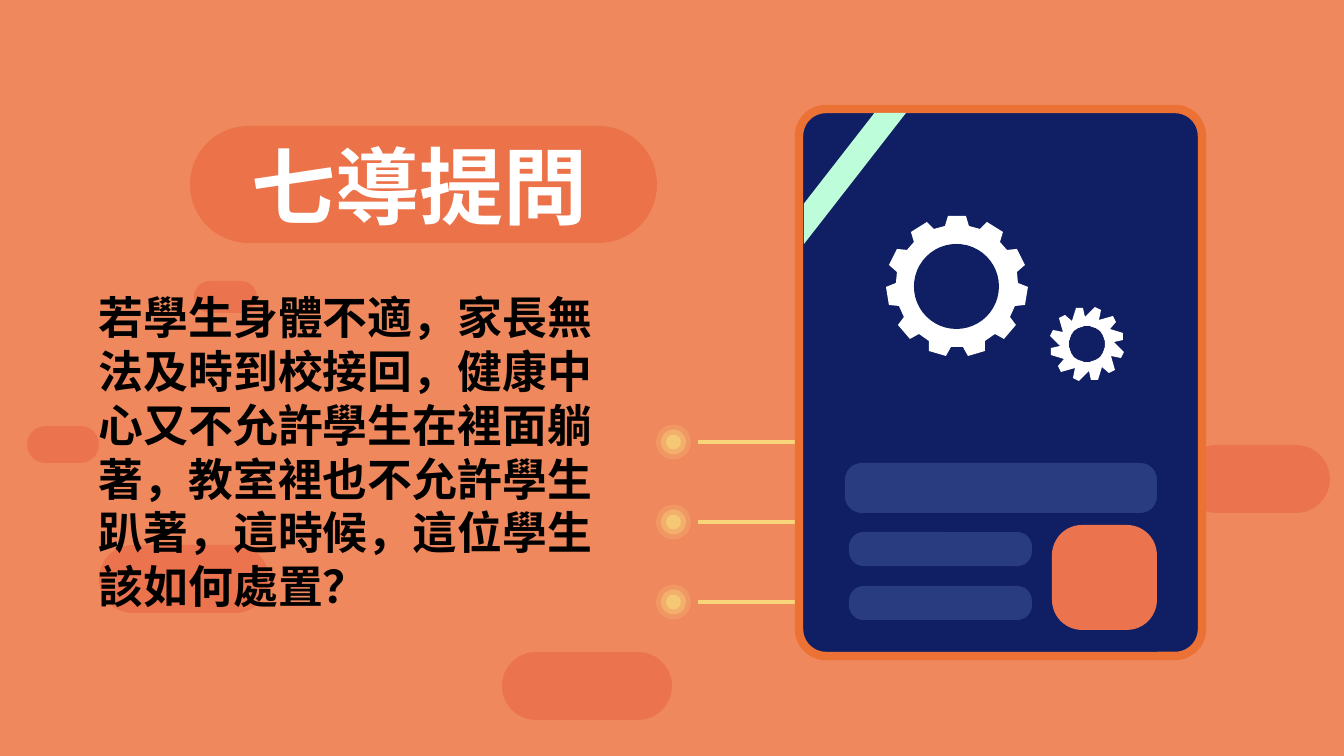
from math import cos, radians, sin

from lxml.etree import SubElement
from pptx import Presentation
from pptx.dml.color import RGBColor
from pptx.enum.shapes import MSO_CONNECTOR, MSO_SHAPE
from pptx.enum.text import PP_ALIGN
from pptx.oxml.ns import qn
from pptx.util import Pt

PX = 12192000 / 1344  # EMU per px
PEACH = RGBColor(0xEF, 0x88, 0x5D)
CORAL = RGBColor(0xEB, 0x73, 0x4E)
TITLE_CORAL = RGBColor(0xEC, 0x72, 0x49)
BORDER = RGBColor(0xEB, 0x71, 0x34)
NAVY = RGBColor(0x10, 0x1F, 0x64)
BLUE = RGBColor(0x29, 0x3C, 0x80)
MINT = RGBColor(0xBE, 0xFD, 0xDA)
YELLOW = RGBColor(0xF8, 0xD4, 0x7B)
WHITE = RGBColor(0xFF, 0xFF, 0xFF)
BLACK = RGBColor(0, 0, 0)

prs = Presentation()
prs.slide_width, prs.slide_height = round(1344 * PX), round(756 * PX)
slide = prs.slides.add_slide(prs.slide_layouts[6])
slide.background.fill.solid()
slide.background.fill.fore_color.rgb = PEACH


def add_block(kind, x, y, w, h, color, adj=None):
    s = slide.shapes.add_shape(kind, *[round(v * PX) for v in (x, y, w, h)])
    s.shadow.inherit = False
    s.fill.solid()
    s.fill.fore_color.rgb = color
    s.line.fill.background()
    if adj is not None:
        s.adjustments[0] = adj
    return s


def add_gear(cx, cy, hole, teeth, profile):
    """Draw a gear; profile lists (radius, degrees) points of one tooth."""
    rim = [(r, a + 360 / teeth * i) for i in range(teeth) for r, a in profile]
    bore = [(hole, -a) for a in range(0, 360, 5)]
    rim, bore = [[(cx + r * cos(radians(a)), cy + r * sin(radians(a)))
                  for r, a in ring] for ring in (rim, bore)]
    fb = slide.shapes.build_freeform(*rim[0], scale=PX)
    fb.add_line_segments(rim[1:])
    fb.move_to(*bore[0])
    fb.add_line_segments(bore[1:])
    s = fb.convert_to_shape()
    s.shadow.inherit = False
    s.fill.solid()
    s.fill.fore_color.rgb = WHITE
    s.line.fill.background()


# Lines leading to the card
SIGNALS = [(442, 2.25), (522, 2.25), (602, 3)]
for y, width in SIGNALS:
    c = slide.shapes.add_connector(
        MSO_CONNECTOR.STRAIGHT, *[round(v * PX) for v in (698, y, 799, y)])
    c.line.color.rgb = YELLOW
    c.line.width = Pt(width)
    SubElement(c._element.spPr, qn("a:effectLst"))

# Card and background pills
add_block(MSO_SHAPE.ROUNDED_RECTANGLE, 1183, 445, 147, 68, CORAL, 0.5)
card = add_block(MSO_SHAPE.ROUNDED_RECTANGLE, 799, 109, 403, 547, NAVY, 0.067)
card.line.color.rgb = BORDER
card.line.width = Pt(6)
add_block(MSO_SHAPE.DIAGONAL_STRIPE, 804, 113, 102, 131, MINT, 0.691)
for x, y, w, h, color in [
    (27, 426, 72, 37, CORAL),
    (99, 545, 170, 68, CORAL),
    (502, 652, 170, 68, CORAL),
    (194, 281, 63, 32, CORAL),
    (190, 126, 467, 117, TITLE_CORAL),
]:
    add_block(MSO_SHAPE.ROUNDED_RECTANGLE, x, y, w, h, color, 0.5)

# Title and question
QUESTION = ("若學生身體不適，家長無法及時到校接回，健康中心又不允許學生在裡面躺著，"
            "教室裡也不允許學生趴著，這時候，這位學生該如何處置？")
for text, x, y, w, h, size, font, color, align in [
    ("七導提問", 182, 130, 475, 112, 60, "Arial", WHITE, PP_ALIGN.CENTER),
    (QUESTION, 89, 285, 557, 336, 32, "Noto Sans CJK SC", BLACK, PP_ALIGN.LEFT),
]:
    box = slide.shapes.add_textbox(*[round(v * PX) for v in (x, y, w, h)])
    tf = box.text_frame
    tf.word_wrap = True
    p = tf.paragraphs[0]
    p.text = text
    p.alignment = align
    p.line_spacing = Pt(size * 1.2)
    p.font.size = Pt(size)
    p.font.bold = True
    p.font.name = font
    p.font.color.rgb = color
    SubElement(p.font._element, qn("a:ea"), typeface="Noto Sans CJK SC")

# Gears and panels on the card
add_gear(1087, 344, 18, 12, [(27, -3.5), (37.9, 12.5), (36.5, 23)])
add_gear(957, 286, 20, 11, [(61.5, -101), (71, -97.3), (71, -82.7), (61.5, -79)])
for x, y, w, h, color, adj in [
    (845, 463, 312, 50, BLUE, 0.334),
    (1052, 525, 105, 105, CORAL, 0.287),
    (849, 532, 183, 34, BLUE, 0.43),
    (849, 586, 183, 34, BLUE, 0.43),
]:
    add_block(MSO_SHAPE.ROUNDED_RECTANGLE, x, y, w, h, color, adj)
add_block(MSO_SHAPE.OVAL, 914, 244, 85, 85, NAVY)

# Glowing dots at the line starts
for y, _ in SIGNALS:
    for d, opacity in [(35, 20), (25, 40), (15, 70)]:
        dot = add_block(MSO_SHAPE.OVAL, 673.5 - d / 2, y - d / 2, d, d, YELLOW)
        rgb = dot._element.spPr.find(qn("a:solidFill")).find(qn("a:srgbClr"))
        SubElement(rgb, qn("a:alpha"), val=str(opacity * 1000))

prs.save("out.pptx")
